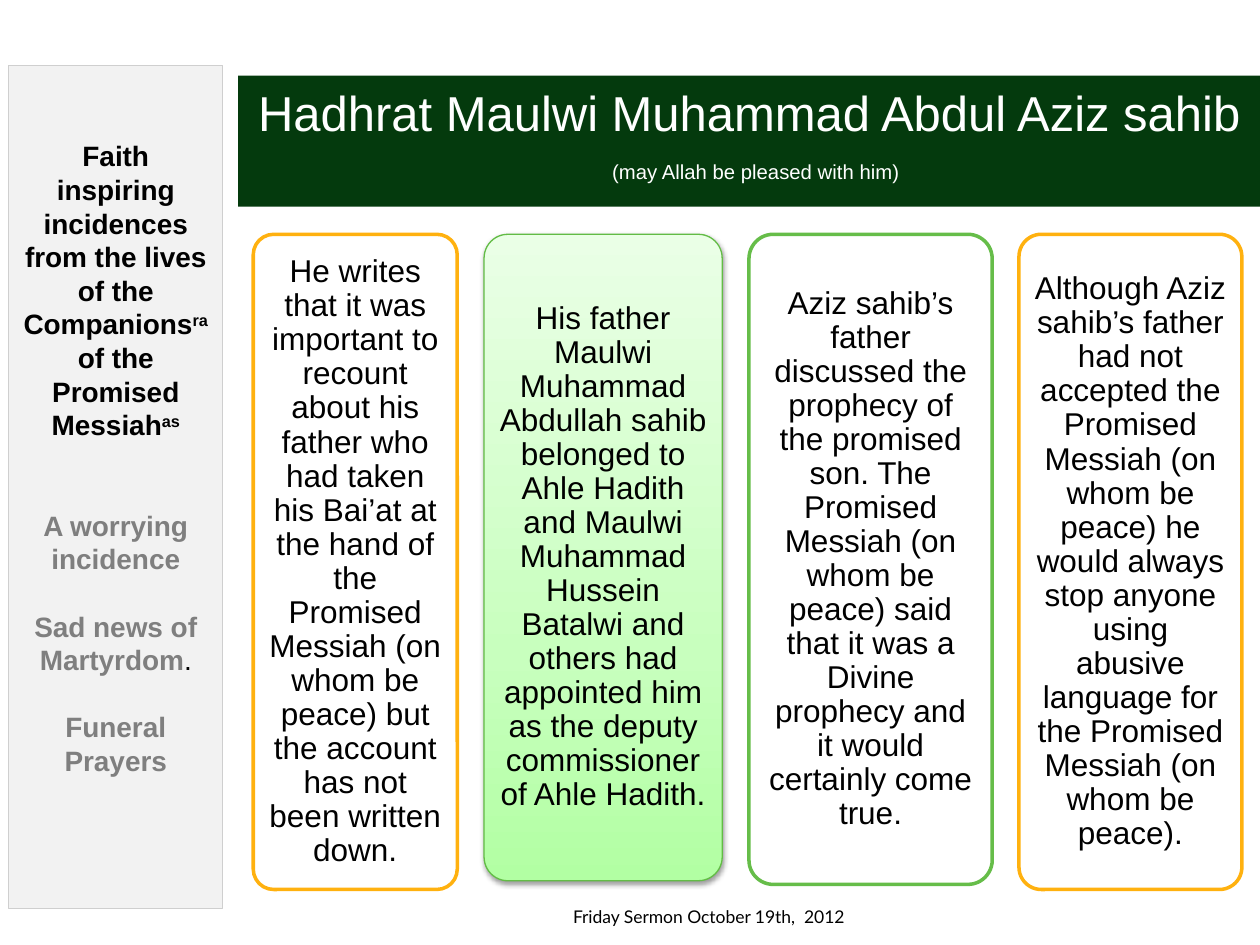
from copy import deepcopy

from lxml.etree import SubElement
from pptx import Presentation
from pptx.dml.color import RGBColor
from pptx.enum.shapes import MSO_SHAPE as SHAPE
from pptx.enum.text import MSO_ANCHOR as ANCHOR, MSO_AUTO_SIZE as AUTO, PP_ALIGN as ALIGN
from pptx.oxml.ns import qn
from pptx.util import Pt

COLORS = {
    "banner": "043A0D", "white": "FFFFFF", "black": "000000",
    "panel": "F2F2F2", "panel_line": "CFCFCF", "gray": "7F7F7F",
    "amber": "FFB10F", "green": "66BD49", "bright_green": "62BC45",
}
GRADIENT = [(0, "B2FFA3"), (0.35, "C8FFBE"), (1, "EAFFE6")]
CARDS = [
    ("He writes that it was important to recount about his father who had taken "
     "his Bai’at at the hand of the Promised Messiah (on whom be peace) but the "
     "account has not been written down.", 116.6, 374.4, "amber"),
    ("His father Maulwi Muhammad Abdullah sahib belonged to Ahle Hadith and Maulwi "
     "Muhammad Hussein Batalwi and others had appointed him as the deputy "
     "commissioner of Ahle Hadith.", 136.1, 369.4, "bright_green"),
    ("Aziz sahib’s father discussed the prophecy of the promised son. The Promised "
     "Messiah (on whom be peace) said that it was a Divine prophecy and it would "
     "certainly come true.", 139, 371.5, "green"),
    ("Although Aziz sahib’s father had not accepted the Promised Messiah (on whom "
     "be peace) he would always stop anyone using abusive language for the Promised "
     "Messiah (on whom be peace).", 127.4, 374.4, "amber"),
]
CARD_LEFT, CARD_TOP, CARD_GAP = 144.7, 133.9, 15.3
SIDE_LINE = 19.2


def rgb(name):
    """Return the colour for a palette name or a hex string."""
    return RGBColor.from_string(COLORS.get(name, name))


def add_run(p, text, size=16, color="black", bold=False, font="Arial", raised=False):
    """Add a formatted run to a paragraph."""
    r = p.add_run()
    r.text = text
    r.font.size, r.font.name, r.font.bold = Pt(size), font, bold
    r.font.color.rgb = rgb(color)
    if raised:
        r._r.get_or_add_rPr().set("baseline", "30000")


def next_paragraph(tf, before=0):
    """Return a centred paragraph, reusing the first one while it is empty."""
    first = tf.paragraphs[0]
    p = tf.add_paragraph() if first.runs else first
    p.alignment = ALIGN.CENTER
    if before:
        p.space_before = Pt(before)
    return p


def add_panel(s, kind, box, fill, line, width):
    """Add a filled and outlined shape without a shadow."""
    sp = s.shapes.add_shape(kind, *map(Pt, box))
    sp.shadow.inherit = False
    sp.fill.solid()
    sp.fill.fore_color.rgb = rgb(fill)
    sp.line.color.rgb = rgb(line)
    sp.line.width = Pt(width)
    sp.text_frame.word_wrap = True
    return sp


def highlight(sp):
    """Give a card the green gradient and a soft shadow below."""
    sp.fill.gradient()
    sp.fill.gradient_angle = 90
    stops = sp._element.spPr.find(".//" + qn("a:gsLst"))
    stops.insert(1, deepcopy(stops[0]))
    for stop, (position, color) in zip(sp.fill.gradient_stops, GRADIENT):
        stop.position = position
        stop.color.rgb = rgb(color)
    effects = sp._element.spPr.find(qn("a:effectLst"))
    shadow = SubElement(effects, qn("a:outerShdw"), blurRad=str(Pt(3.1)),
                        dist=str(Pt(1.6)), dir="5400000", rotWithShape="0")
    color = SubElement(shadow, qn("a:srgbClr"), val=COLORS["black"])
    SubElement(color, qn("a:alpha"), val="38000")


def add_title(s):
    """Format the title placeholder as the green banner."""
    sp = s.shapes.title
    sp.left, sp.top, sp.width, sp.height = map(Pt, (136.1, 43.2, 583.9, 74.9))
    sp.fill.solid()
    sp.fill.fore_color.rgb = rgb("banner")
    tf = sp.text_frame
    tf.auto_size, tf.vertical_anchor = AUTO.NONE, ANCHOR.MIDDLE
    add_run(next_paragraph(tf), "Hadhrat Maulwi Muhammad Abdul Aziz sahib",
            size=28, color="white")
    p = next_paragraph(tf)
    add_run(p, " ", size=28, color="white")
    add_run(p, "(may Allah be pleased with him)", size=20, color="white", raised=True)


def add_sidebar(s):
    """Add the list of sermon topics with the current one in black."""
    sp = add_panel(s, SHAPE.RECTANGLE, (5, 37.4, 122.4, 481.7), "panel", "panel_line", 0.75)
    tf = sp.text_frame
    tf.vertical_anchor = ANCHOR.TOP
    tf.margin_top = Pt(3.6 + 2 * SIDE_LINE)
    p = next_paragraph(tf)
    for text, raised in (
        ("Faith inspiring incidences from the lives of the Companions", False),
        ("ra", True), (" of the Promised Messiah", False), ("as", True),
    ):
        add_run(p, text, bold=True, raised=raised)
    for topic, lines in (("A worrying incidence", 2), ("Sad news of Martyrdom", 1),
                         ("Funeral Prayers", 1)):
        p = next_paragraph(tf, before=lines * SIDE_LINE)
        add_run(p, topic, color="gray", bold=True)
        if topic.endswith("Martyrdom"):
            add_run(p, ".")


def add_cards(s):
    """Add the row of rounded story cards."""
    left = CARD_LEFT
    for text, width, height, line in CARDS:
        special = line == "bright_green"
        sp = add_panel(s, SHAPE.ROUNDED_RECTANGLE, (left, CARD_TOP, width, height),
                       "white", line, 0.75 if special else 2)
        sp.adjustments[0] = 0.1
        if special:
            highlight(sp)
        tf = sp.text_frame
        tf.vertical_anchor = ANCHOR.MIDDLE
        tf.margin_left = tf.margin_right = tf.margin_top = tf.margin_bottom = Pt(5)
        p = next_paragraph(tf)
        p.line_spacing = 0.9
        add_run(p, text, size=18)
        left += width + CARD_GAP


def add_footer(s):
    """Add the sermon date below the cards."""
    tf = s.shapes.add_textbox(*map(Pt, (320.4, 514, 172.8, 19.4))).text_frame
    tf.word_wrap = False
    add_run(tf.paragraphs[0], "Friday Sermon October 19th,  2012", size=10, font="Lato")


def main():
    """Build and save the slide."""
    prs = Presentation()
    prs.slide_width, prs.slide_height = Pt(720), Pt(540)
    s = prs.slides.add_slide(prs.slide_layouts[5])
    add_title(s)
    add_sidebar(s)
    add_cards(s)
    add_footer(s)
    prs.save("out.pptx")


if __name__ == "__main__":
    main()
